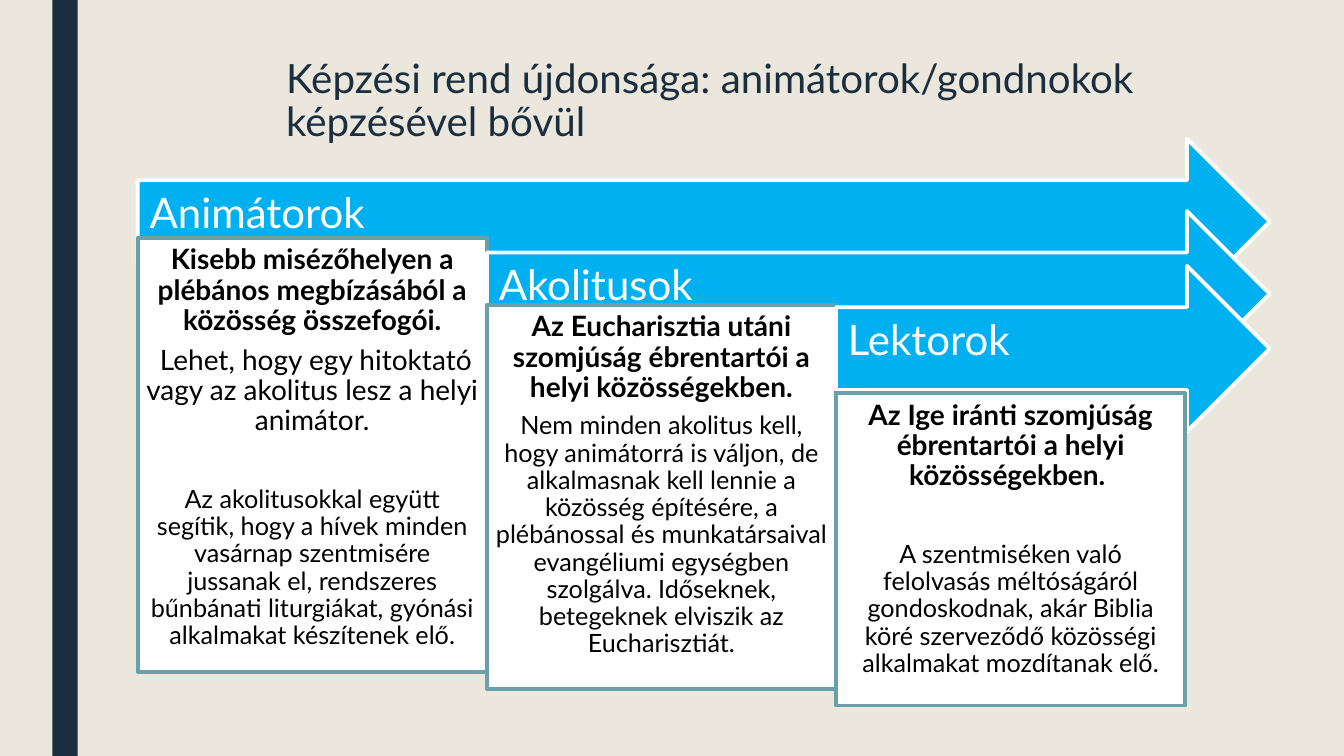
from pptx import Presentation
from pptx.dml.color import RGBColor
from pptx.enum.shapes import MSO_SHAPE
from pptx.enum.text import MSO_ANCHOR, PP_ALIGN
from pptx.util import Cm, Pt

RECTANGLE, ARROW = MSO_SHAPE.RECTANGLE, MSO_SHAPE.RIGHT_ARROW
TOP, MIDDLE = MSO_ANCHOR.TOP, MSO_ANCHOR.MIDDLE
LEFT, CENTER = PP_ALIGN.LEFT, PP_ALIGN.CENTER

COLORS = {
    "background": "EBE7DD",
    "navy": "1A2E40",
    "blue": "00B0F0",
    "teal": "69A1AB",
    "white": "FFFFFF",
    "black": "000000",
}
FONT = "Lato"
TITLE = "Képzési rend újdonsága: animátorok/gondnokok képzésével bővül"

LEAD = {"size": 20, "bold": True, "after": 7}
NOTE = {"size": 20, "after": 7}
DETAIL = {"size": 18, "after": 6.3}
SPACED_DETAIL = {**DETAIL, "before": 28.6}

ROLES = [
    {
        "name": "Animátorok", "arrow_top": 3.5, "box_top": 5.99, "box_height": 10.95,
        "text": [
            ("Kisebb misézőhelyen a plébános megbízásából a közösség összefogói.", LEAD),
            (" Lehet, hogy egy hitoktató vagy az akolitus lesz a helyi animátor.", NOTE),
            ("Az akolitusokkal együtt segítik, hogy a hívek minden vasárnap szentmisére "
             "jussanak el, rendszeres bűnbánati liturgiákat, gyónási alkalmakat "
             "készítenek elő.", SPACED_DETAIL),
        ],
    },
    {
        "name": "Akolitusok", "arrow_top": 5.32, "box_top": 7.68, "box_height": 9.68,
        "text": [
            ("Az Eucharisztia utáni szomjúság ébrentartói a helyi közösségekben.", LEAD),
            ("Nem minden akolitus kell, hogy animátorrá is váljon, de alkalmasnak kell "
             "lennie a közösség építésére, a plébánossal és munkatársaival evangéliumi "
             "egységben szolgálva. Időseknek, betegeknek elviszik az Eucharisztiát.", DETAIL),
        ],
    },
    {
        "name": "Lektorok", "arrow_top": 6.7, "box_top": 9.91, "box_height": 7.87,
        "text": [
            ("Az Ige iránti szomjúság ébrentartói a helyi közösségekben. ", LEAD),
            ("A szentmiséken való felolvasás méltóságáról gondoskodnak, akár Biblia köré "
             "szerveződő közösségi alkalmakat mozdítanak elő.", SPACED_DETAIL),
        ],
    },
]

SLIDE_WIDTH, SLIDE_HEIGHT = 33.87, 19.05
COLUMN_LEFT, COLUMN_WIDTH = 3.47, 8.8
ARROW_RIGHT, ARROW_HEIGHT = 32, 4.17


def color(name):
    return RGBColor.from_string(COLORS[name])


def set_frame(shape, insets, anchor=TOP):
    frame = shape.text_frame
    frame.word_wrap = True
    frame.vertical_anchor = anchor
    frame.margin_left, frame.margin_top, frame.margin_right, frame.margin_bottom = map(Cm, insets)
    return frame


def write(para, text, size, fill="black", bold=False, align=CENTER, before=0, after=0, spacing=0.9):
    para.alignment = align
    para.line_spacing = spacing
    para.space_before, para.space_after = Pt(before), Pt(after)
    span = para.add_run()
    span.text = text
    span.font.name, span.font.size, span.font.bold = FONT, Pt(size), bold
    span.font.color.rgb = color(fill)


def add_block(page, kind, bounds, fill, line=None):
    shape = page.shapes.add_shape(kind, *map(Cm, bounds))
    shape.shadow.inherit = False
    shape.fill.solid()
    shape.fill.fore_color.rgb = color(fill)
    if line:
        shape.line.color.rgb = color(line)
        shape.line.width = Pt(2.75)
    else:
        shape.line.fill.background()
    return shape


def add_role(page, index, role):
    left = COLUMN_LEFT + index * COLUMN_WIDTH
    bounds = (left, role["arrow_top"], ARROW_RIGHT - left, ARROW_HEIGHT)
    arrow = add_block(page, ARROW, bounds, "blue", "white")
    frame = set_frame(arrow, (0.3, 0.3, 0.71, 0.66), MIDDLE)
    write(frame.paragraphs[0], role["name"], size=30, fill="white", align=LEFT, after=10.5)

    bounds = (left, role["box_top"], COLUMN_WIDTH, role["box_height"])
    box = add_block(page, RECTANGLE, bounds, "white", "teal")
    frame = set_frame(box, (0.2, 0.2, 0.2, 0.2))
    for number, (text, style) in enumerate(role["text"]):
        para = frame.add_paragraph() if number else frame.paragraphs[0]
        write(para, text, **style)


def main():
    deck = Presentation()
    deck.slide_width, deck.slide_height = Cm(SLIDE_WIDTH), Cm(SLIDE_HEIGHT)
    page = deck.slides.add_slide(deck.slide_layouts[6])
    page.background.fill.solid()
    page.background.fill.fore_color.rgb = color("background")

    add_block(page, RECTANGLE, (1.32, 0, 0.64, SLIDE_HEIGHT), "navy")
    title = page.shapes.add_textbox(Cm(6.96), Cm(1.35), Cm(22.1), Cm(3))
    frame = set_frame(title, (0.25, 0.13, 0.25, 0.13))
    write(frame.paragraphs[0], TITLE, size=28.8, fill="navy", align=LEFT, spacing=0.89)

    for index, role in enumerate(ROLES):
        add_role(page, index, role)
    deck.save("out.pptx")


if __name__ == "__main__":
    main()
